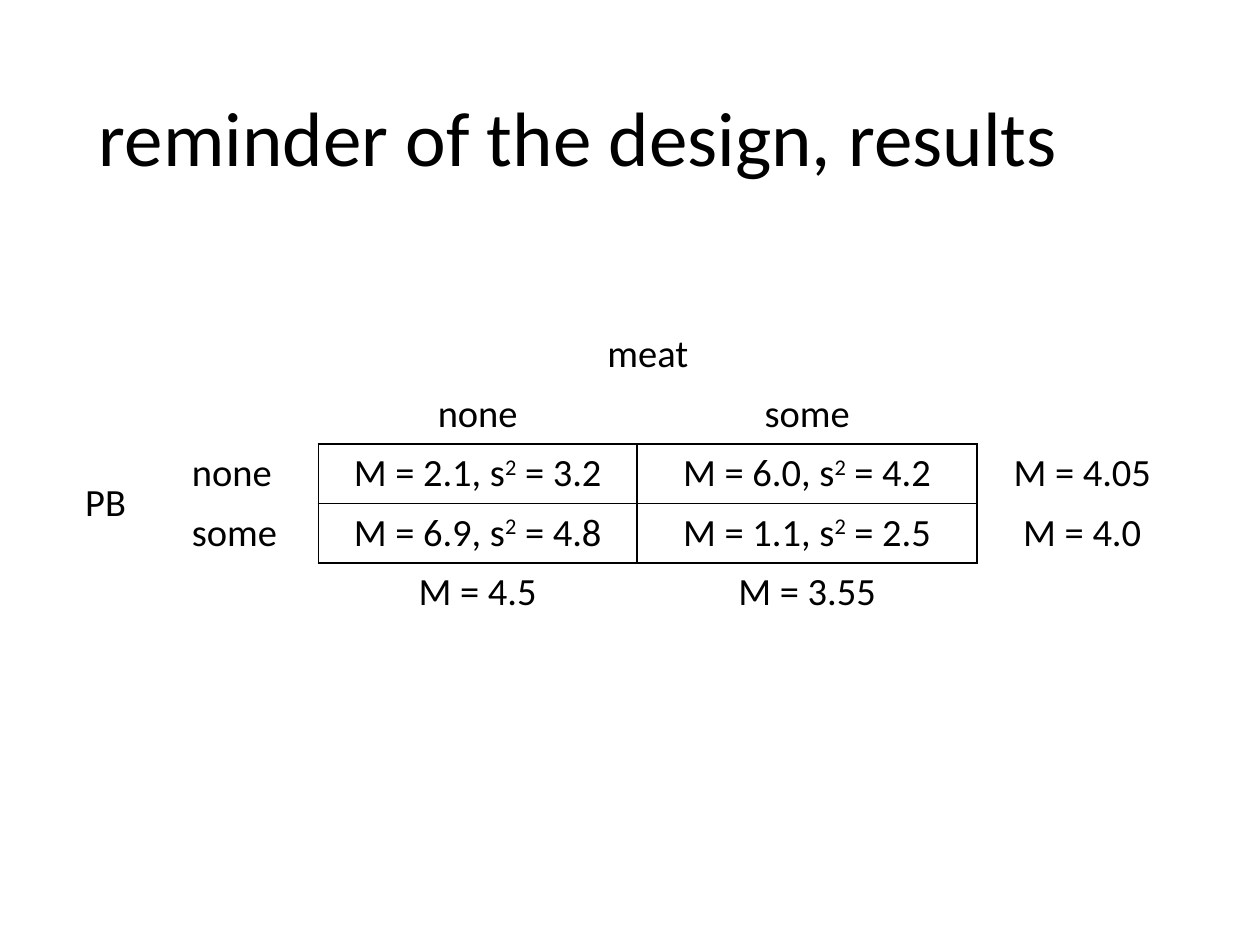
from lxml.etree import SubElement
from pptx import Presentation
from pptx.dml.color import RGBColor
from pptx.enum.text import MSO_ANCHOR, PP_ALIGN
from pptx.oxml.ns import qn
from pptx.util import Pt

BLACK = "000000"
NO_STYLE = "{2D5ABB26-0587-4C30-8999-92F81FD0307C}"
COLUMN_WIDTHS = [61, 79.5, 182, 194.5, 120]
ROW_HEIGHT = 34
DESIGN = [
    ["", "", "meat", "", ""],
    ["", "", "none", "some", ""],
    ["PB", "none", "M = 2.1, s^2^ = 3.2", "M = 6.0, s^2^ = 4.2", "M = 4.05"],
    ["", "some", "M = 6.9, s^2^ = 4.8", "M = 1.1, s^2^ = 2.5", "M = 4.0"],
    ["", "", "M = 4.5", "M = 3.55", ""],
]
RESULT_CELLS = {(row, column) for row in (2, 3) for column in (2, 3)}
NEIGHBOURS = {"a:lnL": (0, -1), "a:lnR": (0, 1), "a:lnT": (-1, 0), "a:lnB": (1, 0)}


def color(hex_code):
    return RGBColor.from_string(hex_code)


def write(frame, text, size=22, align=PP_ALIGN.LEFT, anchor=MSO_ANCHOR.TOP, spacing=None):
    """Write one paragraph; text between ^ marks is superscript."""
    frame.word_wrap = True
    frame.vertical_anchor = anchor
    paragraph = frame.paragraphs[0]
    paragraph.alignment = align
    paragraph.line_spacing = spacing
    for index, piece in enumerate(text.split("^")):
        run = paragraph.add_run()
        run.text = piece
        run.font.name = "Calibri"
        run.font.size = Pt(size)
        run.font.color.rgb = color(BLACK)
        if index % 2:
            run._r.get_or_add_rPr().set("baseline", "30000")


def add_border(cell, side):
    line = SubElement(cell._tc.get_or_add_tcPr(), qn(side), w=str(Pt(1)))
    fill = SubElement(line, qn("a:solidFill"))
    SubElement(fill, qn("a:srgbClr"), val=BLACK)


def add_title(slide, left, top, width, height):
    title = slide.shapes.add_textbox(Pt(left), Pt(top), Pt(width), Pt(height))
    write(title.text_frame, "reminder of the design, results",
          size=44, anchor=MSO_ANCHOR.MIDDLE, spacing=0.9)


def add_design_table(slide, left, top):
    frame = slide.shapes.add_table(
        len(DESIGN), len(COLUMN_WIDTHS), Pt(left), Pt(top),
        Pt(sum(COLUMN_WIDTHS)), Pt(ROW_HEIGHT * len(DESIGN)))
    table = frame.table
    table.first_row = table.horz_banding = False
    table._tbl.tblPr.find(qn("a:tableStyleId")).text = NO_STYLE
    for column, width in zip(table.columns, COLUMN_WIDTHS):
        column.width = Pt(width)
    for row in table.rows:
        row.height = Pt(ROW_HEIGHT)

    # Factor names span their two levels
    table.cell(0, 2).merge(table.cell(0, 3))
    table.cell(2, 0).merge(table.cell(3, 0))

    for r, texts in enumerate(DESIGN):
        for c, text in enumerate(texts):
            cell = table.cell(r, c)
            # Lines run around the result cells, on both sides of each edge
            for side, (down, right) in NEIGHBOURS.items():
                if {(r, c), (r + down, c + right)} & RESULT_CELLS:
                    add_border(cell, side)
            cell.fill.background()
            if text:
                write(cell.text_frame, text,
                      align=PP_ALIGN.CENTER if c > 1 else PP_ALIGN.LEFT)
    table.cell(2, 0).vertical_anchor = MSO_ANCHOR.MIDDLE


def main():
    deck = Presentation()
    deck.slide_width, deck.slide_height = Pt(720), Pt(540)
    slide = deck.slides.add_slide(deck.slide_layouts[6])
    add_title(slide, 49.5, 28.75, 621, 104.4)
    add_design_table(slide, 41.5, 185.75)
    deck.save("out.pptx")


if __name__ == "__main__":
    main()
